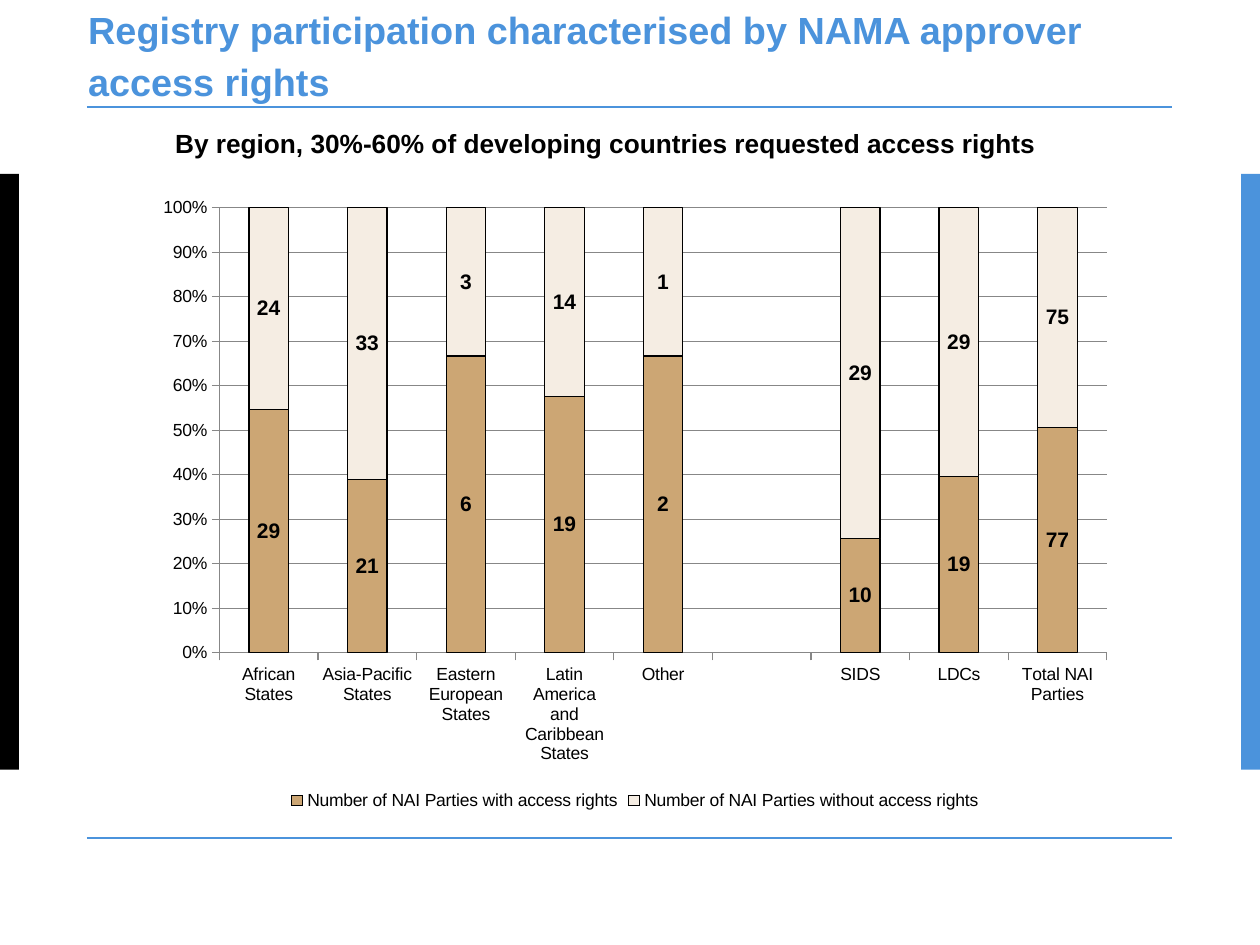
from lxml.etree import SubElement
from pptx import Presentation
from pptx.chart.data import CategoryChartData
from pptx.dml.color import RGBColor
from pptx.enum.chart import XL_CHART_TYPE, XL_LEGEND_POSITION, XL_TICK_MARK
from pptx.enum.shapes import MSO_CONNECTOR, MSO_SHAPE
from pptx.enum.text import MSO_ANCHOR, PP_ALIGN
from pptx.oxml.ns import qn
from pptx.util import Inches, Pt

BLACK = RGBColor(0x00, 0x00, 0x00)
BLUE = RGBColor(0x4B, 0x93, 0xDC)
TAN = RGBColor(0xCC, 0xA6, 0x74)
CREAM = RGBColor(0xF5, 0xED, 0xE3)
GRAY = RGBColor(0x87, 0x87, 0x87)
FONT = "Arial"

# Content
TITLE = "Registry participation characterised by NAMA approver access rights"
SUBTITLE = "By region, 30%-60% of developing countries requested access rights"
REGIONS = ["African States", "Asia-Pacific States", "Eastern European States",
           "Latin America and Caribbean States", "Other", "",
           "SIDS", "LDCs", "Total NAI Parties"]
PARTIES = [
    ("Number of NAI Parties with access rights", TAN,
     [29, 21, 6, 19, 2, None, 10, 19, 77]),
    ("Number of NAI Parties without access rights", CREAM,
     [24, 33, 3, 14, 1, None, 29, 29, 75]),
]
SIDE_BARS = [(0, BLACK), (9.85, BLUE)]  # left, colour
RULES = [0.85, 6.65]


def style_font(font, size, color=BLACK, bold=False):
    font.name = FONT
    font.size = Pt(size)
    font.bold = bold
    font.color.rgb = color


def add_heading(slide, text, box, size, color):
    heading = slide.shapes.add_textbox(*map(Inches, box))
    frame = heading.text_frame
    frame.word_wrap = True
    frame.text = text
    style_font(frame.paragraphs[0].runs[0].font, size, color, bold=True)
    return frame


prs = Presentation()
prs.slide_width, prs.slide_height = Inches(10), Inches(7.5)
slide = prs.slides.add_slide(prs.slide_layouts[6])

# Side bars and rules
for left, color in SIDE_BARS:
    bar = slide.shapes.add_shape(MSO_SHAPE.RECTANGLE, Inches(left), Inches(1.38),
                                 Inches(0.15), Inches(4.73))
    bar.shadow.inherit = False
    bar.fill.solid()
    bar.fill.fore_color.rgb = color
    bar.line.fill.background()

for y in RULES:
    rule = slide.shapes.add_connector(MSO_CONNECTOR.STRAIGHT, Inches(0.69), Inches(y),
                                      Inches(9.3), Inches(y))
    rule.line.color.rgb = BLUE
    rule.line.width = Pt(1)
    SubElement(rule._element.spPr, qn("a:effectLst"))

# Headings
title = add_heading(slide, TITLE, (0.7, 0.24, 8.61, 0.34), 21.6, BLUE)
title.margin_left = title.margin_right = title.margin_top = title.margin_bottom = 0
title.vertical_anchor = MSO_ANCHOR.MIDDLE
title.paragraphs[0].line_spacing = Pt(30)
subtitle = add_heading(slide, SUBTITLE, (0.67, 0.96, 8.27, 0.35), 15, BLACK)
subtitle.paragraphs[0].alignment = PP_ALIGN.CENTER

# Chart
chart_data = CategoryChartData()
chart_data.categories = REGIONS
for name, _, counts in PARTIES:
    chart_data.add_series(name, counts)
chart = slide.shapes.add_chart(XL_CHART_TYPE.COLUMN_STACKED_100, Inches(1.14), Inches(1.47),
                               Inches(7.8), Inches(5), chart_data).chart
style_font(chart.font, 10)
chart.has_title = False
chart.has_legend = True
chart.legend.position = XL_LEGEND_POSITION.BOTTOM
chart.legend.include_in_layout = False

plot = chart.plots[0]
plot.gap_width, plot.overlap = 150, 100
plot.vary_by_categories = False
for series, (_, color, _) in zip(plot.series, PARTIES):
    series.format.fill.solid()
    series.format.fill.fore_color.rgb = color
    series.format.line.color.rgb = BLACK
    series.format.line.width = Pt(0.75)
    series.data_labels.show_value = True
    style_font(series.data_labels.font, 12, bold=True)

for axis in (chart.category_axis, chart.value_axis):
    axis.major_tick_mark = XL_TICK_MARK.OUTSIDE
    axis.minor_tick_mark = XL_TICK_MARK.NONE
    axis.format.line.color.rgb = GRAY
    axis.format.line.width = Pt(0.75)
percent_axis = chart.value_axis
percent_axis.minimum_scale, percent_axis.maximum_scale = 0, 1
percent_axis.major_unit = 0.1
percent_axis.tick_labels.number_format = "0%"
percent_axis.tick_labels.number_format_is_linked = False
percent_axis.major_gridlines.format.line.color.rgb = GRAY
percent_axis.major_gridlines.format.line.width = Pt(0.75)

prs.save("out.pptx")
